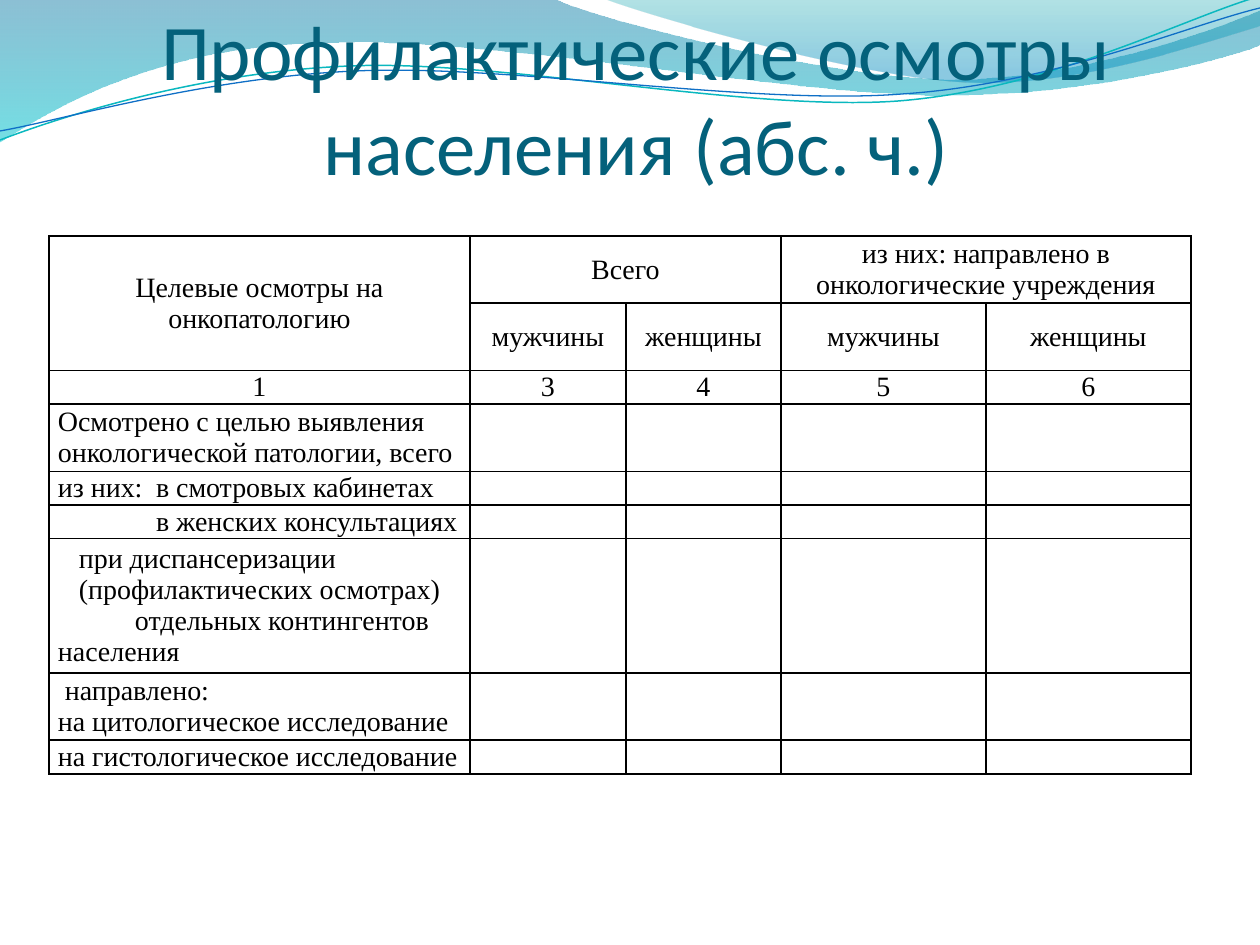
"""Build the slide on preventive check-ups of the population."""
from lxml.etree import SubElement
from pptx import Presentation
from pptx.dml.color import RGBColor
from pptx.enum.text import MSO_ANCHOR, PP_ALIGN
from pptx.oxml.ns import qn
from pptx.util import Pt

PX = 9144000 / 1260
COLORS = {
    "title": "04617B", "text": "000000", "border": "000000",
    "deep": "0074A1", "aqua": "00C6CF", "teal": "00A1A9", "sky": "008BBF",
    "teal_line": "0AB8BF", "blue_line": "0F6FC6",
}


def px(length):
    return round(length * PX)


def write(frame, text, font="Times New Roman", size=16, color="text",
          align=PP_ALIGN.LEFT, indent=0, tab=0):
    paragraph = frame.paragraphs[0]
    if paragraph.runs:
        paragraph = frame.add_paragraph()
    paragraph.alignment = align
    properties = paragraph._p.get_or_add_pPr()
    if indent:
        properties.set("marL", "0")
        properties.set("indent", str(px(indent)))
    if tab:
        stops = SubElement(properties, qn("a:tabLst"))
        SubElement(stops, qn("a:tab"), pos=str(px(tab)), algn="l")
    if not text:
        ending = SubElement(paragraph._p, qn("a:endParaRPr"), sz=str(size * 100))
        SubElement(ending, qn("a:latin"), typeface=font)
        return
    run = paragraph.add_run()
    run.text = text
    run.font.name = font
    run.font.size = Pt(size)
    run.font.color.rgb = RGBColor.from_string(COLORS[color])


deck = Presentation()
deck.slide_width, deck.slide_height = px(1260), px(945)
slide = deck.slides.add_slide(deck.slide_layouts[6])

# Each piece holds the end of a straight line or the three points of a curve.
left_wave = [
    [(0, 0)], [(554, -1)], [(600, 21), (837, 79), (955, 79)],
    [(1075, 79), (1207, 33), (1260, 11)], [(1261, 45)],
    [(1238, 55), (1096, 96), (940, 95)], [(784, 95), (481, 35), (324, 43)],
    [(163, 45), (58, 105), (-1, 142)], [(0, 0)],
]
right_wave = [
    [(604, -1)], [(641, 14), (859, 78), (969, 82)],
    [(1079, 87), (1211, 40), (1260, 26)], [(1260, 0)], [(604, -1)],
]
teal_crest = [
    [(0, 140)], [(60, 117), (199, 72), (349, 66)],
    [(498, 59), (747, 112), (898, 101)], [(1050, 89), (1182, 19), (1257, -3)],
]
blue_crest = [
    [(0, 131)], [(59, 121), (207, 77), (357, 71)],
    [(508, 64), (752, 106), (903, 94)], [(1053, 84), (1186, 26), (1260, 8)],
]
waves = [
    (left_wave, [("deep", 0, 45), ("aqua", 1, 55)], None),
    (right_wave, [("teal", 0, 30), ("sky", 0.8, 45)], None),
    (teal_crest, None, ("teal_line", 0.85)),
    (blue_crest, None, ("blue_line", 0.75)),
]
for pieces, gradient, stroke in waves:
    outline = [(px(x), px(y)) for piece in pieces for x, y in piece]
    builder = slide.shapes.build_freeform(*outline[0], scale=1.0)
    builder.add_line_segments(outline[1:], close=gradient is not None)
    wave = builder.convert_to_shape()
    wave.shadow.inherit = False
    segments = iter(list(wave._element.spPr.iter(qn("a:lnTo"))))
    for piece in pieces[1:]:
        group = [next(segments) for _ in piece]
        if len(group) == 3:
            curve = group[0]
            curve.tag = qn("a:cubicBezTo")
            for segment in group[1:]:
                curve.append(segment[0])
                segment.getparent().remove(segment)
    if gradient:
        wave.line.fill.background()
        wave.fill.gradient()
        wave.fill.gradient_angle = 270
        for stop, (color, position, _) in zip(wave.fill.gradient_stops, gradient):
            stop.color.rgb = RGBColor.from_string(COLORS[color])
            stop.position = position
        tints = wave._element.spPr.iter(qn("a:srgbClr"))
        for tint, (_, _, opacity) in zip(list(tints), gradient):
            SubElement(tint, qn("a:alpha"), val=str(opacity * 1000))
    else:
        color, width = stroke
        wave.fill.background()
        wave.line.color.rgb = RGBColor.from_string(COLORS[color])
        wave.line.width = Pt(width)

title = slide.shapes.add_textbox(px(69), px(2), px(1134), px(192)).text_frame
title.word_wrap = True
title.margin_left = title.margin_right = title.margin_top = title.margin_bottom = 0
write(title, "Профилактические осмотры населения (абс. ч.)", font="Calibri",
      size=45, color="title", align=PP_ALIGN.CENTER)

LINE = 31
PLACE_INDENT = 98
column_widths = [421, 156, 155, 205, 205]
row_lines = [2, 2, 1, 2, 1, 1, 4, 2, 1]
headers = [
    ["Целевые осмотры на онкопатологию", "Всего", "",
     "из них: направлено в онкологические учреждения", ""],
    ["", "мужчины", "женщины", "мужчины", "женщины"],
    ["1", "3", "4", "5", "6"],
]
checkups = [
    [("Осмотрено с целью выявления онкологической патологии, всего", 0)],
    [("из них:\tв смотровых кабинетах", 0)],
    [("в женских консультациях", PLACE_INDENT)],
    [("при диспансеризации", 21), ("(профилактических осмотрах)", 21),
     ("отдельных контингентов населения", 77)],
    [("направлено:", 7), ("на цитологическое исследование", 0)],
    [("на гистологическое исследование", 0)],
]
rows = [[[(text, 0)] for text in header] for header in headers]
rows += [[checkup] + [[("", 0)]] * 4 for checkup in checkups]

table = slide.shapes.add_table(
    len(rows), len(column_widths), px(49), px(236),
    px(sum(column_widths)), px(LINE * sum(row_lines))).table
table.first_row = table.horz_banding = False
for column, width in zip(table.columns, column_widths):
    column.width = px(width)
for row, lines in zip(table.rows, row_lines):
    row.height = px(LINE * lines)

for r, row in enumerate(rows):
    for c, paragraphs in enumerate(row):
        cell = table.cell(r, c)
        cell.margin_left = cell.margin_right = px(9)
        cell.margin_top = cell.margin_bottom = 0
        cell.vertical_anchor = MSO_ANCHOR.MIDDLE
        align = PP_ALIGN.CENTER if r < len(headers) else PP_ALIGN.LEFT
        for text, indent in paragraphs:
            write(cell.text_frame, text, align=align, indent=indent,
                  tab=PLACE_INDENT if "\t" in text else 0)
        properties = cell._tc.get_or_add_tcPr()
        for side in ("a:lnL", "a:lnR", "a:lnT", "a:lnB"):
            border = SubElement(properties, qn(side), w=str(Pt(1)))
            paint = SubElement(border, qn("a:solidFill"))
            SubElement(paint, qn("a:srgbClr"), val=COLORS["border"])
        cell.fill.background()

for first, last in [((0, 0), (1, 0)), ((0, 1), (0, 2)), ((0, 3), (0, 4))]:
    table.cell(*first).merge(table.cell(*last))

deck.save("out.pptx")
